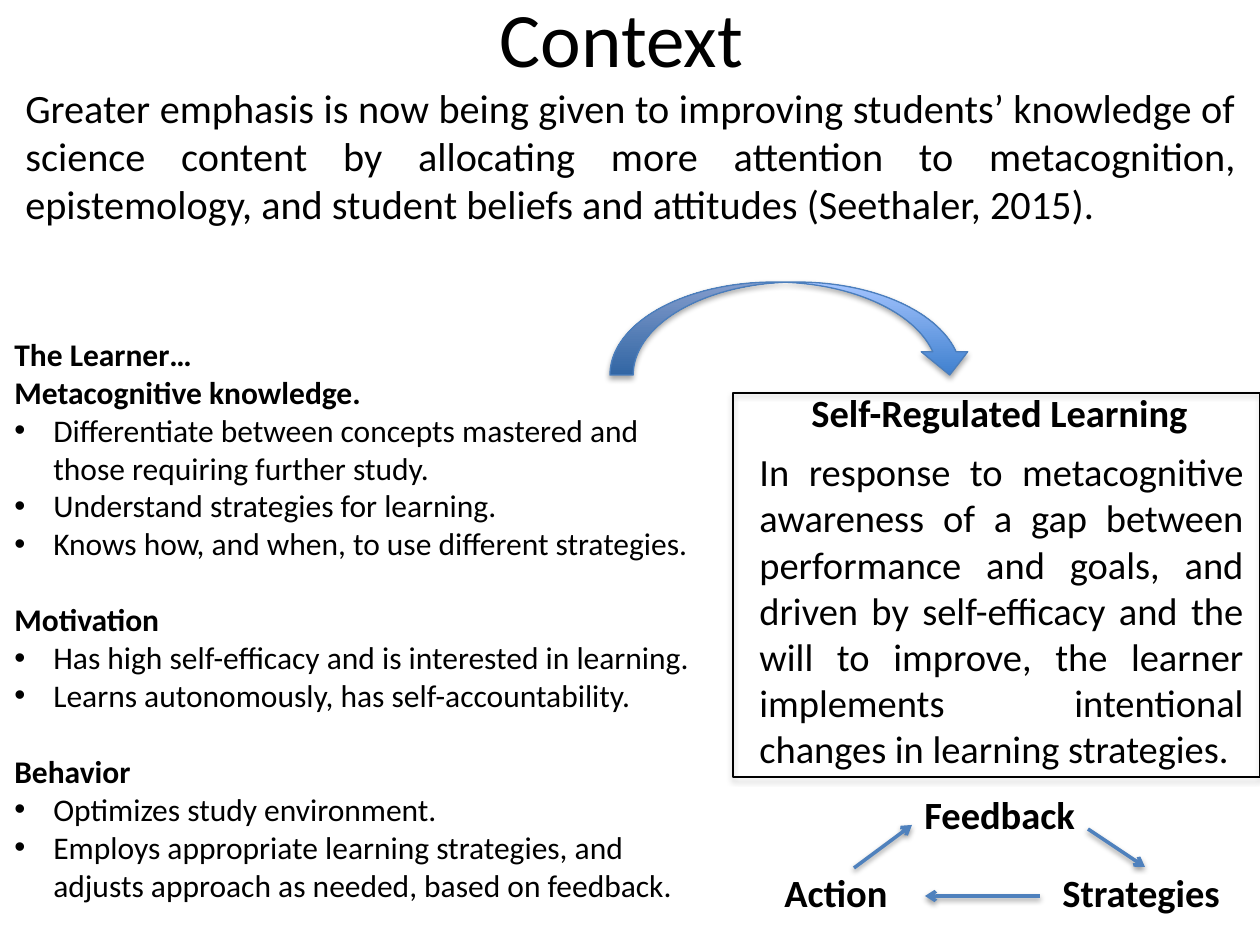
from dataclasses import dataclass

from lxml import etree
from pptx import Presentation
from pptx.dml.color import RGBColor
from pptx.enum.shapes import MSO_CONNECTOR, MSO_SHAPE
from pptx.enum.text import MSO_ANCHOR, PP_ALIGN
from pptx.oxml.ns import qn
from pptx.util import Emu, Pt

PX = 914400 / 126
LEFT, CENTER, JUSTIFY = PP_ALIGN.LEFT, PP_ALIGN.CENTER, PP_ALIGN.JUSTIFY
MIDDLE = MSO_ANCHOR.MIDDLE
RECTANGLE, CURVED_ARROW = MSO_SHAPE.RECTANGLE, MSO_SHAPE.CURVED_DOWN_ARROW
STRAIGHT = MSO_CONNECTOR.STRAIGHT
FONT = "Calibri"
BLACK, CYCLE_BLUE, ARROW_EDGE = "000000", "4F81BD", "4B7EBC"
ARROW_GRADIENT = ("3F80CE", "A4C4FF")
BULLET_INDENT = 39
SECTION_GAP = 22


@dataclass(frozen=True)
class Box:
    left: int
    top: int
    width: int
    height: int


@dataclass(frozen=True)
class Section:
    headings: tuple[str, ...]
    points: tuple[str, ...]


@dataclass(frozen=True)
class Label:
    text: str
    box: Box


@dataclass(frozen=True)
class CycleArrow:
    start: tuple[int, int]
    end: tuple[int, int]


LEARNER_SECTIONS = (
    Section(("The Learner…", "Metacognitive knowledge."),
            ("Differentiate between concepts mastered and those requiring further study.",
             "Understand strategies for learning.",
             "Knows how, and when, to use different strategies.")),
    Section(("Motivation",),
            ("Has high self-efficacy and is interested in learning.",
             "Learns autonomously, has self-accountability.")),
    Section(("Behavior",),
            ("Optimizes study environment.",
             "Employs appropriate learning strategies, and adjusts approach as needed, "
             "based on feedback.")),
)
LABELS = (
    Label("Self-Regulated Learning", Box(799, 383, 408, 59)),
    Label("Feedback", Box(912, 785, 178, 59)),
    Label("Strategies", Box(1050, 863, 186, 59)),
    Label("Action", Box(772, 863, 130, 59)),
)
CYCLE_ARROWS = (
    CycleArrow((1088, 829), (1145, 867)),
    CycleArrow((1040, 896), (925, 896)),
    CycleArrow((854, 868), (912, 825)),
)
EMPHASIS = ("Greater emphasis is now being given to improving students’ knowledge of science "
            "content by allocating more attention to metacognition, epistemology, and student "
            "beliefs and attitudes (Seethaler, 2015).")
REGULATION = ("In response to metacognitive awareness of a gap between performance and goals, "
              "and driven by self-efficacy and the will to improve, the learner implements "
              "intentional changes in learning strategies.")


def px(value: float) -> Emu:
    return Emu(round(value * PX))


def rgb(value: str) -> RGBColor:
    return RGBColor.from_string(value)


def place(shape, box: Box) -> None:
    shape.left, shape.top = px(box.left), px(box.top)
    shape.width, shape.height = px(box.width), px(box.height)


def write(paragraph, text: str, size: int, bold: bool = False, align=LEFT) -> None:
    paragraph.text = text
    paragraph.alignment = align
    for run in paragraph.runs:
        run.font.name, run.font.size, run.font.bold = FONT, Pt(size), bold
        run.font.color.rgb = rgb(BLACK)


def add_bullet(paragraph) -> None:
    properties = paragraph._p.get_or_add_pPr()
    properties.set("marL", str(px(BULLET_INDENT)))
    properties.set("indent", str(-px(BULLET_INDENT)))
    etree.SubElement(properties, qn("a:buFont"), typeface="Arial")
    etree.SubElement(properties, qn("a:buChar"), char="•")


def add_text_frame(slide, box: Box, wrap: bool = True):
    frame = slide.shapes.add_textbox(*map(px, (box.left, box.top, box.width, box.height))).text_frame
    frame.word_wrap = wrap
    return frame


def add_shadow(shape, distance: int, opacity: int) -> None:
    effects = etree.SubElement(shape._element.spPr, qn("a:effectLst"))
    shadow = etree.SubElement(effects, qn("a:outerShdw"), blurRad="40000", dist=str(distance),
                              dir="5400000", rotWithShape="0")
    color = etree.SubElement(shadow, qn("a:srgbClr"), val=BLACK)
    etree.SubElement(color, qn("a:alpha"), val=str(opacity * 1000))


def add_outlined(slide, kind, box: Box, line: str):
    shape = slide.shapes.add_shape(kind, *map(px, (box.left, box.top, box.width, box.height)))
    shape.fill.background()
    shape.line.color.rgb, shape.line.width = rgb(line), Pt(0.75)
    add_shadow(shape, 23000, 35)
    return shape


def add_cycle_arrow(slide, arrow: CycleArrow) -> None:
    connector = slide.shapes.add_connector(STRAIGHT, *map(px, arrow.start + arrow.end))
    connector.line.color.rgb, connector.line.width = rgb(CYCLE_BLUE), Pt(2)
    etree.SubElement(connector.line._get_or_add_ln(), qn("a:tailEnd"), type="arrow")
    add_shadow(connector, 20000, 38)


def add_learner(slide, box: Box) -> None:
    frame = add_text_frame(slide, box)
    paragraph = frame.paragraphs[0]
    for number, section in enumerate(LEARNER_SECTIONS):
        for position, text in enumerate(section.headings + section.points):
            if number or position:
                paragraph = frame.add_paragraph()
            is_heading = position < len(section.headings)
            write(paragraph, text, 18, bold=is_heading)
            if number and not position:
                paragraph.space_before = Pt(SECTION_GAP)
            if not is_heading:
                add_bullet(paragraph)


def main() -> None:
    deck = Presentation()
    deck.slide_width, deck.slide_height = px(1260), px(945)
    slide = deck.slides.add_slide(deck.slide_layouts[5])

    # Title and introduction
    title = slide.shapes.title
    place(title, Box(271, -42, 701, 158))
    title.text_frame.vertical_anchor = MIDDLE
    write(title.text_frame.paragraphs[0], "Context", 44, align=CENTER)
    introduction = add_text_frame(slide, Box(13, 77, 1237, 624))
    write(introduction.paragraphs[0], EMPHASIS, 23, align=JUSTIFY)

    # Learner traits
    add_learner(slide, Box(2, 329, 723, 585))

    # Self-regulated learning panel
    regulation = add_text_frame(slide, Box(747, 442, 509, 339))
    write(regulation.paragraphs[0], REGULATION, 22, align=JUSTIFY)
    add_outlined(slide, RECTANGLE, Box(733, 393, 527, 384), BLACK)

    # Arrow from learner to panel
    transfer = add_outlined(slide, CURVED_ARROW, Box(610, 282, 363, 93), ARROW_EDGE)
    transfer.fill.gradient()
    transfer.fill.gradient_angle = 90
    for stop, color, position in zip(transfer.fill.gradient_stops, ARROW_GRADIENT, (0, 1)):
        stop.color.rgb, stop.position = rgb(color), position

    # Panel heading and feedback cycle
    for label in LABELS:
        write(add_text_frame(slide, label.box, wrap=False).paragraphs[0], label.text, 22, bold=True)
    for arrow in CYCLE_ARROWS:
        add_cycle_arrow(slide, arrow)

    deck.save("out.pptx")


if __name__ == "__main__":
    main()
